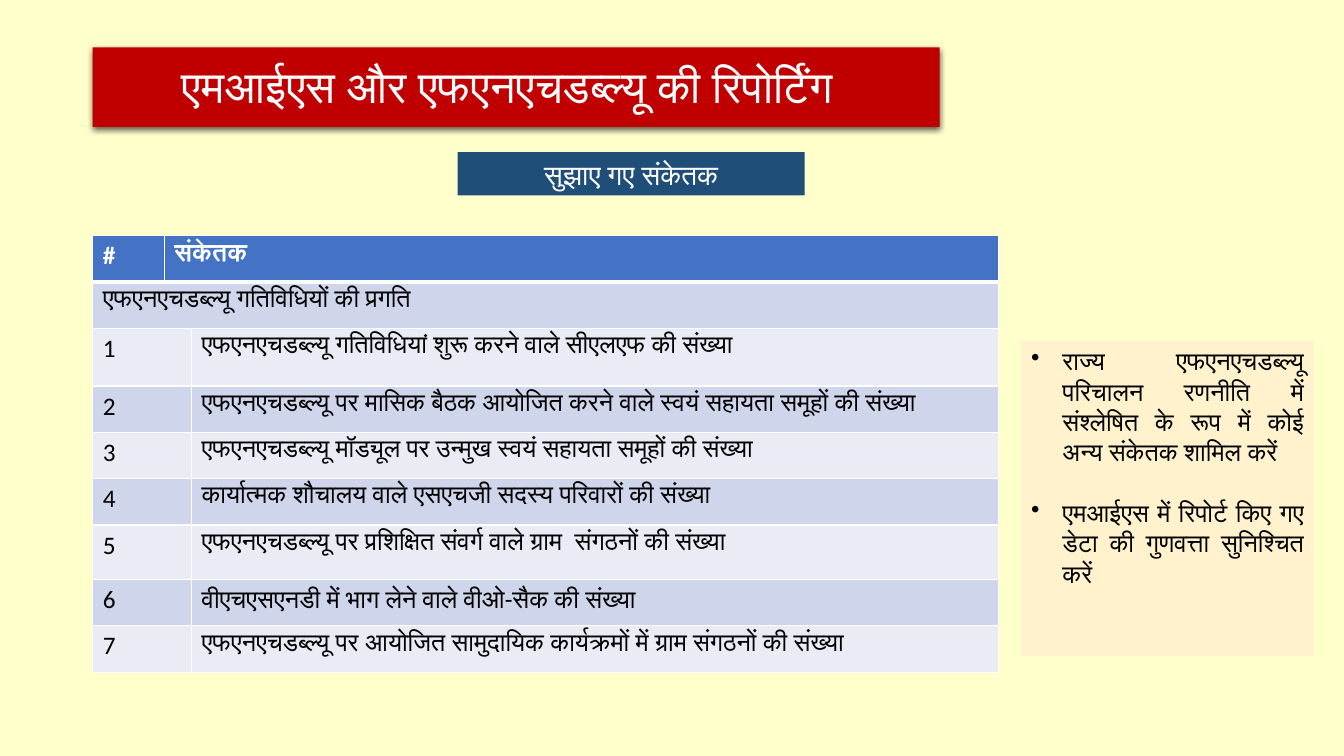
import pptx
import pptx.dml.color
import pptx.enum.shapes
import pptx.enum.text
import pptx.oxml
import pptx.oxml.ns
import pptx.util
from lxml import etree

Inches, Pt = pptx.util.Inches, pptx.util.Pt
ALIGN, ANCHOR = pptx.enum.text.PP_ALIGN, pptx.enum.text.MSO_ANCHOR
COLORS = {
    "page": "FFFFCC", "banner": "C00000", "label": "1F4E79", "note": "FFF2CC",
    "header": "4472C4", "band_dark": "CFD5EA", "band_light": "E9EBF5",
    "white": "FFFFFF", "black": "000000",
}
INDICATORS = [
    "एफएनएचडब्ल्यू गतिविधियां शुरू करने वाले सीएलएफ की संख्या",
    "एफएनएचडब्ल्यू पर मासिक बैठक आयोजित करने वाले स्वयं सहायता समूहों की संख्या",
    "एफएनएचडब्ल्यू मॉड्यूल पर उन्मुख स्वयं सहायता समूहों की संख्या",
    "कार्यात्मक शौचालय वाले एसएचजी सदस्य परिवारों की संख्या",
    "एफएनएचडब्ल्यू पर प्रशिक्षित संवर्ग वाले ग्राम  संगठनों की संख्या",
    "वीएचएसएनडी में भाग लेने वाले वीओ-सैक की संख्या",
    "एफएनएचडब्ल्यू पर आयोजित सामुदायिक कार्यक्रमों में ग्राम संगठनों की संख्या",
]
NOTES = [
    "राज्य एफएनएचडब्ल्यू परिचालन रणनीति में संश्लेषित के रूप में कोई अन्य संकेतक शामिल करें",
    "एमआईएस में रिपोर्ट किए गए डेटा की गुणवत्ता सुनिश्चित करें",
]


class SlideBuilder:
    """Holds the slide style and adds each kind of element."""

    font = "Calibri"

    def __init__(self, s):
        self.s = s
        self.paint(s.background.fill, "page")

    def rgb(self, name):
        return pptx.dml.color.RGBColor.from_string(COLORS[name])

    def paint(self, fill, name):
        fill.solid()
        fill.fore_color.rgb = self.rgb(name)

    def style(self, tf, size, color, bold=False, align=None):
        for p in tf.paragraphs:
            p.alignment = align
            for r in p.runs:
                r.font.name, r.font.size, r.font.bold = self.font, Pt(size), bold
                r.font.color.rgb = self.rgb(color)

    def box(self, at, color):
        sp = self.s.shapes.add_shape(
            pptx.enum.shapes.MSO_SHAPE.RECTANGLE, *map(Inches, at))
        sp.shadow.inherit = False
        self.paint(sp.fill, color)
        sp.line.fill.background()
        return sp

    def label(self, text, at):
        tf = self.box(at, "label").text_frame
        tf.text = text
        self.style(tf, 20, "white", align=ALIGN.CENTER)

    def banner(self, at):
        effects = self.box(at, "banner")._element.spPr.find(
            pptx.oxml.ns.qn("a:effectLst"))
        effects.append(pptx.oxml.parse_xml(
            f'<a:outerShdw {pptx.oxml.ns.nsdecls("a")} blurRad="{Pt(4.5)}" '
            f'dist="{Pt(1.5)}" dir="5400000" rotWithShape="0">'
            f'<a:srgbClr val="{COLORS["black"]}"><a:alpha val="63000"/>'
            '</a:srgbClr></a:outerShdw>'))

    def title(self, text, at):
        sp = self.s.shapes.title
        sp.left, sp.top, sp.width, sp.height = map(Inches, at)
        tf = sp.text_frame
        tf.text = text
        tf.word_wrap = True
        tf.auto_size = pptx.enum.text.MSO_AUTO_SIZE.NONE
        tf.vertical_anchor = ANCHOR.MIDDLE
        tf.paragraphs[0].line_spacing = 0.9
        self.style(tf, 32, "white", align=ALIGN.CENTER)
        self.s.shapes._spTree.append(sp._element)

    def bullets(self, texts, at):
        tf = self.box(at, "note").text_frame
        tf.vertical_anchor = ANCHOR.TOP
        tf.text = "\n".join(texts)
        for p in tf.paragraphs:
            pPr = p._p.get_or_add_pPr()
            pPr.set("marL", str(Inches(0.31)))
            pPr.set("indent", str(-Inches(0.31)))
            etree.SubElement(pPr, pptx.oxml.ns.qn("a:buChar")).set("char", "•")
        for p in tf.paragraphs[1:]:
            p.space_before = Pt(22)
        self.style(tf, 18, "black", align=ALIGN.JUSTIFY)

    def borders(self, cell, widths):
        tcPr = cell._tc.get_or_add_tcPr()
        for side, width in widths.items():
            tcPr.append(pptx.oxml.parse_xml(
                f'<a:ln{side} {pptx.oxml.ns.nsdecls("a")} w="{Pt(width)}">'
                f'<a:solidFill><a:srgbClr val="{COLORS["white"]}"/></a:solidFill>'
                f'</a:ln{side}>'))

    def table(self, rows, at, widths, heights):
        tbl = self.s.shapes.add_table(
            len(rows), len(widths), *map(Inches, at)).table
        tbl.first_row = tbl.horz_banding = False
        for column, width in zip(tbl.columns, widths):
            column.width = Inches(width)
        for i, (row, height) in enumerate(zip(rows, heights)):
            tbl.rows[i].height = Inches(height)
            fill = "header" if i == 0 else "band_dark" if i % 2 else "band_light"
            for j, text in enumerate(row):
                cell = tbl.cell(i, j)
                self.borders(cell, {"L": 1, "R": 1, "T": 3 if i == 1 else 1,
                                    "B": 3 if i == 0 else 1})
                self.paint(cell.fill, fill)
                cell.text = text
                self.style(cell.text_frame, 18, "black" if i else "white", i == 0)
        tbl.cell(0, 1).merge(tbl.cell(0, 2))
        tbl.cell(1, 0).merge(tbl.cell(1, 2))
        for i in range(2, len(rows)):
            tbl.cell(i, 0).merge(tbl.cell(i, 1))


def main():
    prs = pptx.Presentation()
    prs.slide_width, prs.slide_height = Inches(13.33), Inches(7.5)
    slide = SlideBuilder(prs.slides.add_slide(prs.slide_layouts[5]))

    slide.label("सुझाए गए संकेतक", (4.54, 1.51, 3.44, 0.43))
    rows = [("#", "संकेतक", ""), ("एफएनएचडब्ल्यू गतिविधियों की प्रगति", "", "")]
    rows += [(str(n), "", text) for n, text in enumerate(INDICATORS, 1)]
    heights = [0.46] * len(rows)
    heights[2], heights[6] = 0.57, 0.54
    slide.table(rows, (0.92, 2.34, 8.98, sum(heights)), (0.71, 0.27, 8), heights)
    slide.bullets(NOTES, (10.13, 3.38, 2.9, 3.13))
    slide.banner((0.92, 0.47, 8.4, 0.79))
    slide.title("एमआईएस और एफएनएचडब्ल्यू की रिपोर्टिंग", (0.92, 0.6, 8.22, 0.57))

    prs.save("out.pptx")


if __name__ == "__main__":
    main()
